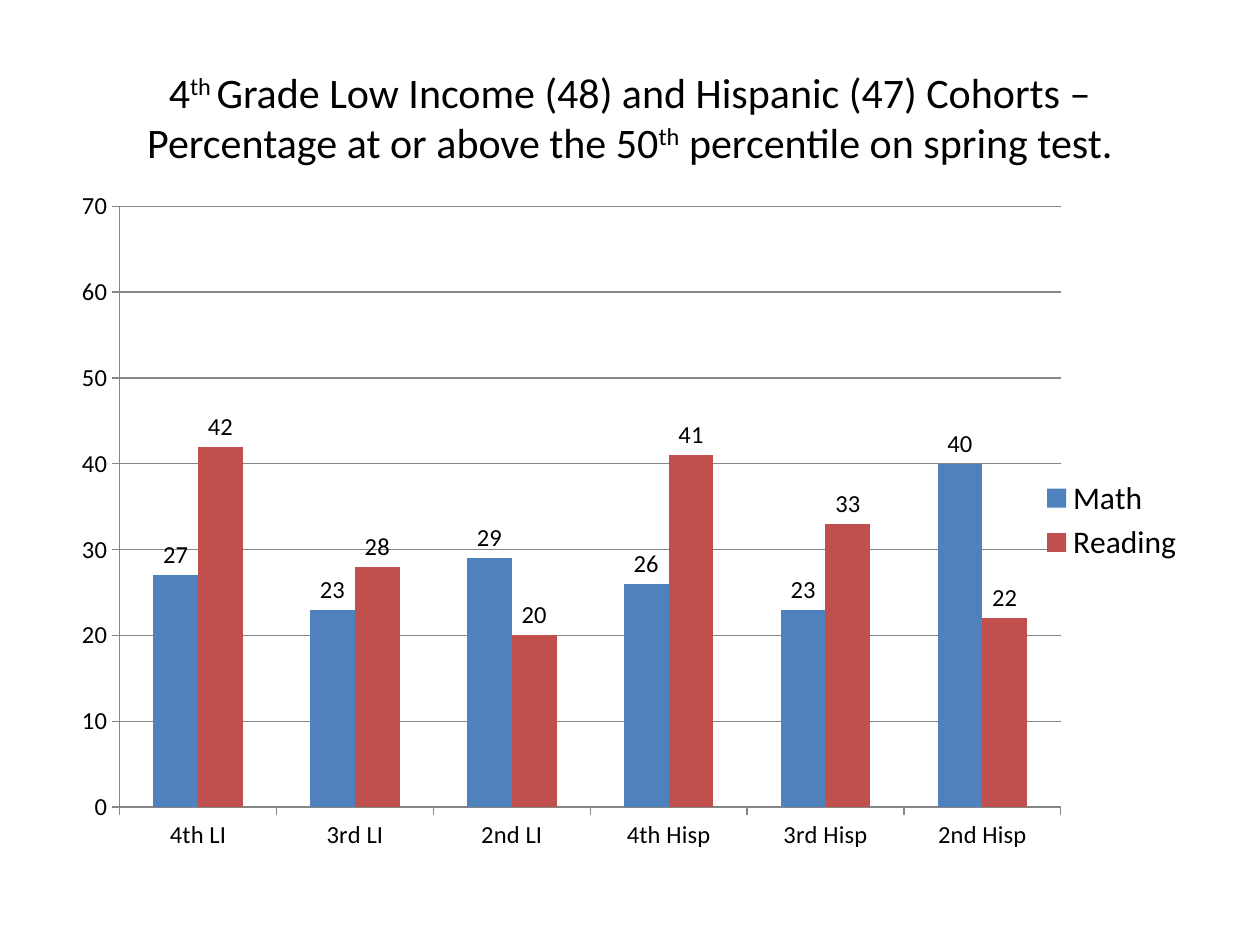
from dataclasses import dataclass

from lxml import etree
from pptx import Presentation
from pptx.chart.data import CategoryChartData
from pptx.dml.color import RGBColor
from pptx.enum.chart import XL_CHART_TYPE, XL_LABEL_POSITION, XL_LEGEND_POSITION, XL_TICK_MARK
from pptx.enum.text import MSO_ANCHOR, MSO_AUTO_SIZE, PP_ALIGN
from pptx.oxml.ns import qn
from pptx.util import Inches, Pt

COLUMNS = XL_CHART_TYPE.COLUMN_CLUSTERED
LEGEND_RIGHT = XL_LEGEND_POSITION.RIGHT
LABEL_ABOVE = XL_LABEL_POSITION.OUTSIDE_END
TICK_OUT = XL_TICK_MARK.OUTSIDE
TICK_NONE = XL_TICK_MARK.NONE
MIDDLE = MSO_ANCHOR.MIDDLE
CENTER = PP_ALIGN.CENTER
NO_AUTOFIT = MSO_AUTO_SIZE.NONE
TITLE_ONLY = 5


@dataclass(frozen=True)
class Theme:
    font: str = "Calibri"
    text: str = "000000"
    axis: str = "868686"
    title_size: int = 24
    legend_size: int = 18
    label_size: int = 14


@dataclass(frozen=True)
class Subject:
    name: str
    percentages: tuple
    color: str


THEME = Theme()
TITLE_SPANS = (
    ("4", False),
    ("th ", True),
    ("Grade Low Income (48) and Hispanic (47) Cohorts – Percentage at or above the 50", False),
    ("th", True),
    (" percentile on spring test.", False),
)
COHORTS = ("4th LI", "3rd LI", "2nd LI", "4th Hisp", "3rd Hisp", "2nd Hisp")
SUBJECTS = (
    Subject("Math", (27, 23, 29, 26, 23, 40), "4F81BD"),
    Subject("Reading", (42, 28, 20, 41, 33, 22), "C0504D"),
)
PLOT_AREA = {"x": 0.05, "y": 0.04, "w": 0.83, "h": 0.88}


def format_font(font, size: int) -> None:
    font.name = THEME.font
    font.size = Pt(size)
    font.bold = False
    font.color.rgb = RGBColor.from_string(THEME.text)


def add_span(para, text: str, *, size: int, superscript: bool = False) -> None:
    span = para.add_run()
    span.text = text
    format_font(span.font, size)
    if superscript:
        span.font._element.set("baseline", "30000")


def fill_title(title) -> None:
    title.left, title.top = Inches(0.5), Inches(0.3)
    title.width, title.height = Inches(9), Inches(1.25)
    frame = title.text_frame
    frame.word_wrap = True
    frame.auto_size = NO_AUTOFIT
    frame.vertical_anchor = MIDDLE
    para = frame.paragraphs[0]
    para.alignment = CENTER
    for text, superscript in TITLE_SPANS:
        add_span(para, text, size=THEME.title_size, superscript=superscript)


def format_axis(axis) -> None:
    axis.major_tick_mark = TICK_OUT
    axis.minor_tick_mark = TICK_NONE
    axis.format.line.color.rgb = RGBColor.from_string(THEME.axis)
    format_font(axis.tick_labels.font, THEME.label_size)


def place_plot(chart) -> None:
    """Fix the inner plot area as fractions of the chart."""
    plot_area = chart._chartSpace.chart.plotArea
    for old in plot_area.findall(qn("c:layout")):
        plot_area.remove(old)
    layout = etree.Element(qn("c:layout"))
    plot_area.insert(0, layout)
    manual = etree.SubElement(layout, qn("c:manualLayout"))
    settings = {"layoutTarget": "inner", "xMode": "edge", "yMode": "edge", **PLOT_AREA}
    for tag, value in settings.items():
        etree.SubElement(manual, qn(f"c:{tag}")).set("val", str(value))


def add_cohort_chart(page) -> None:
    data = CategoryChartData(number_format="0")
    data.categories = COHORTS
    for subject in SUBJECTS:
        data.add_series(subject.name, subject.percentages)
    chart = page.shapes.add_chart(
        COLUMNS, Inches(0.5), Inches(1.42), Inches(9), Inches(5.42), data
    ).chart
    chart.has_title = False
    format_font(chart.font, THEME.legend_size)

    # Axes and gridlines
    format_axis(chart.category_axis)
    values = chart.value_axis
    format_axis(values)
    values.minimum_scale, values.maximum_scale, values.major_unit = 0, 70, 10
    values.has_major_gridlines = True
    values.major_gridlines.format.line.color.rgb = RGBColor.from_string(THEME.axis)

    # Columns and their values
    plot = chart.plots[0]
    plot.gap_width, plot.overlap = 150, 0
    plot.vary_by_categories = False
    for series, subject in zip(plot.series, SUBJECTS):
        series.format.fill.solid()
        series.format.fill.fore_color.rgb = RGBColor.from_string(subject.color)
        labels = series.data_labels
        labels.show_value = True
        labels.position = LABEL_ABOVE
        format_font(labels.font, THEME.label_size)

    # Legend
    chart.has_legend = True
    chart.legend.position = LEGEND_RIGHT
    chart.legend.include_in_layout = False
    format_font(chart.legend.font, THEME.legend_size)
    place_plot(chart)


def main() -> None:
    deck = Presentation()
    deck.slide_width, deck.slide_height = Inches(10), Inches(7.5)
    page = deck.slides.add_slide(deck.slide_layouts[TITLE_ONLY])
    fill_title(page.shapes.title)
    add_cohort_chart(page)
    deck.save("out.pptx")


if __name__ == "__main__":
    main()
